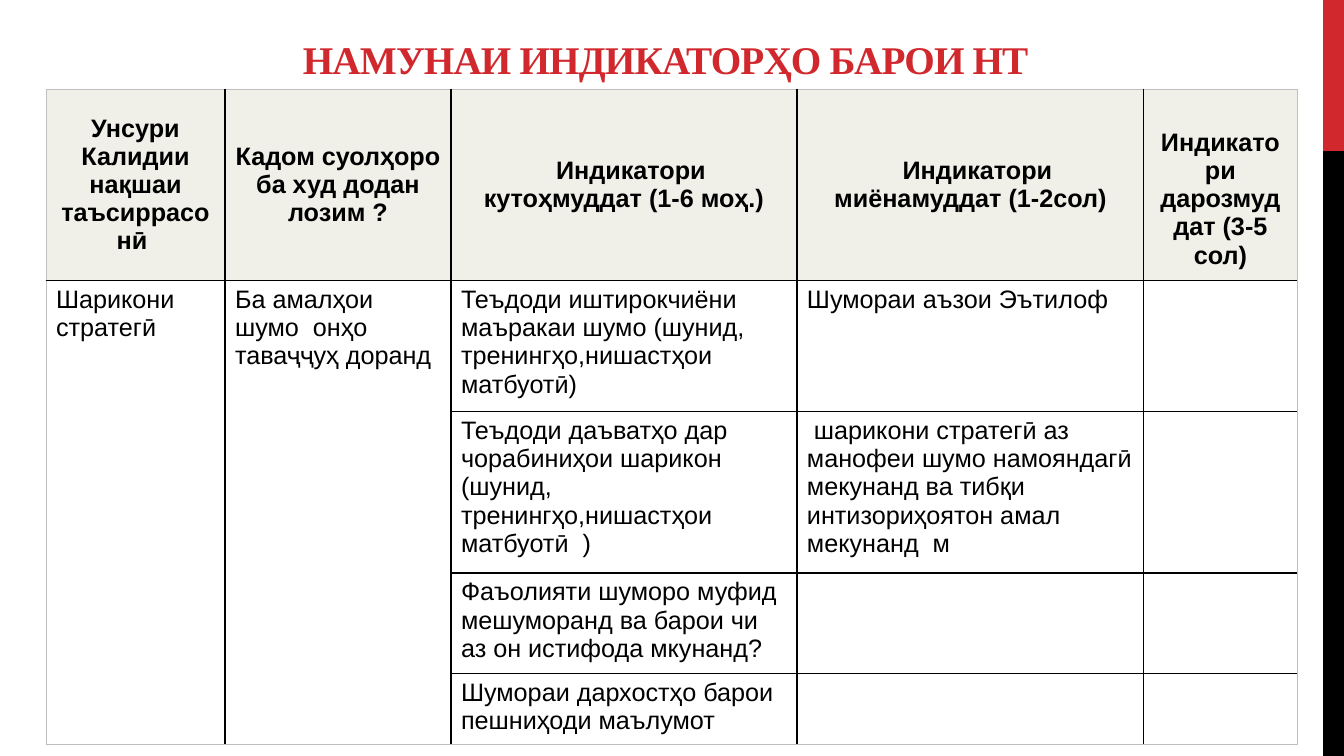
from dataclasses import dataclass

from lxml.etree import SubElement
from pptx import Presentation
from pptx.dml.color import RGBColor
from pptx.enum.shapes import MSO_SHAPE
from pptx.enum.text import MSO_ANCHOR, PP_ALIGN
from pptx.oxml.ns import qn
from pptx.util import Emu, Pt

EMU_PER_PX = 914400 / 100.8


@dataclass(frozen=True)
class Theme:
    red: str = "D1282E"
    black: str = "000000"
    white: str = "FFFFFF"
    header_fill: str = "F0F0E9"
    outer_border: str = "BFBFBF"
    title_font: str = "Times New Roman"
    body_font: str = "Arial"
    title_size: int = 28
    body_size: int = 18


def px(length):
    return Emu(round(length * EMU_PER_PX))


class SlideBuilder:
    def __init__(self, slide, theme):
        self.slide = slide
        self.theme = theme

    def bar(self, left, top, width, height, color):
        shape = self.slide.shapes.add_shape(
            MSO_SHAPE.RECTANGLE, px(left), px(top), px(width), px(height))
        shape.shadow.inherit = False
        shape.fill.solid()
        shape.fill.fore_color.rgb = RGBColor.from_string(color)
        shape.line.fill.background()

    def run(self, paragraph, text, font, size, color, bold):
        run = paragraph.add_run()
        run.text = text
        run.font.name = font
        run.font.size = Pt(size)
        run.font.bold = bold
        run.font.color.rgb = RGBColor.from_string(color)
        return run

    def title(self, left, top, width, height, text):
        frame = self.slide.shapes.add_textbox(
            px(left), px(top), px(width), px(height)).text_frame
        frame.word_wrap = True
        frame.vertical_anchor = MSO_ANCHOR.BOTTOM
        paragraph = frame.paragraphs[0]
        paragraph.alignment = PP_ALIGN.CENTER
        run = self.run(paragraph, text, self.theme.title_font,
                       self.theme.title_size, self.theme.red, True)
        run.font._element.set("spc", "-60")

    def border(self, cell, side, color, width):
        line = SubElement(cell._tc.get_or_add_tcPr(), qn(f"a:{side}"), w=str(Pt(width)))
        fill = SubElement(line, qn("a:solidFill"))
        SubElement(fill, qn("a:srgbClr"), val=color)

    def cell(self, cell, text, is_header, outer_sides, first_indent):
        for side in ("lnL", "lnR", "lnT", "lnB"):
            if side in outer_sides:
                self.border(cell, side, self.theme.outer_border, 0.5)
            else:
                self.border(cell, side, self.theme.black, 1)
        cell.fill.solid()
        cell.fill.fore_color.rgb = RGBColor.from_string(
            self.theme.header_fill if is_header else self.theme.white)
        paragraph = cell.text_frame.paragraphs[0]
        if is_header:
            cell.vertical_anchor = MSO_ANCHOR.MIDDLE
            paragraph.alignment = PP_ALIGN.CENTER
        if first_indent:
            paragraph._p.get_or_add_pPr().set("indent", str(px(first_indent)))
        if text:
            self.run(paragraph, text, self.theme.body_font,
                     self.theme.body_size, self.theme.black, is_header)

    def table(self, left, top, widths, row_height, rows, merged_columns, indents):
        table = self.slide.shapes.add_table(
            len(rows), len(widths), px(left), px(top),
            px(sum(widths)), px(row_height * len(rows))).table
        table.first_row = False
        table.horz_banding = False
        for column, width in zip(table.columns, widths):
            column.width = px(width)
        for row in table.rows:
            row.height = px(row_height)
        last_row, last_column = len(rows) - 1, len(widths) - 1
        for row_index, texts in enumerate(rows):
            for column_index, text in enumerate(texts):
                edges = {
                    "lnL": column_index == 0,
                    "lnR": column_index == last_column,
                    "lnT": row_index == 0,
                    "lnB": row_index == last_row
                    or (row_index > 0 and column_index in merged_columns),
                }
                outer_sides = [side for side, is_outer in edges.items() if is_outer]
                is_header = row_index == 0
                indent = indents.get(column_index, 0) if is_header else 0
                self.cell(table.cell(row_index, column_index), text,
                          is_header, outer_sides, indent)
        for column_index in merged_columns:
            table.cell(1, column_index).merge(table.cell(last_row, column_index))


INDICATOR_ROWS = [
    ["Унсури Калидии нақшаи таъсиррасонӣ ",
     "Кадом суолҳоро ба худ додан лозим ?",
     "Индикатори кутоҳмуддат (1-6 моҳ.)",
     "Индикатори миёнамуддат (1-2сол)",
     " Индикатори дарозмуддат (3-5 сол)"],
    ["Шарикони стратегӣ",
     "Ба амалҳои шумо  онҳо таваҷҷуҳ доранд",
     "Теъдоди иштирокчиёни маъракаи шумо (шунид, тренингҳо,нишастҳои матбуотӣ)",
     "Шумораи аъзои Эътилоф", ""],
    ["", "",
     "Теъдоди даъватҳо дар чорабиниҳои шарикон (шунид, тренингҳо,нишастҳои матбуотӣ  )",
     " шарикони стратегӣ аз манофеи шумо намояндагӣ мекунанд ва тибқи "
     "интизориҳоятон амал мекунанд  м", ""],
    ["", "",
     "Фаъолияти шуморо муфид мешуморанд ва барои чи аз он истифода мкунанд?", "", ""],
    ["", "", "Шумораи дархостҳо барои пешниҳоди маълумот", "", ""],
]


def main():
    presentation = Presentation()
    presentation.slide_width = px(1344)
    presentation.slide_height = px(756)
    theme = Theme()
    slide = presentation.slides.add_slide(presentation.slide_layouts[6])
    builder = SlideBuilder(slide, theme)
    builder.bar(1323, 0, 21, 151, theme.red)
    builder.bar(1323, 151, 21, 605, theme.black)
    builder.title(63, 15, 1214, 72, "НАМУНАИ ИНДИКАТОРҲО БАРОИ НТ ")
    builder.table(46, 89, [179, 226, 346, 347, 153], 41,
                  INDICATOR_ROWS, merged_columns=(0, 1), indents={2: 14, 3: 14})
    presentation.save("out.pptx")


if __name__ == "__main__":
    main()
